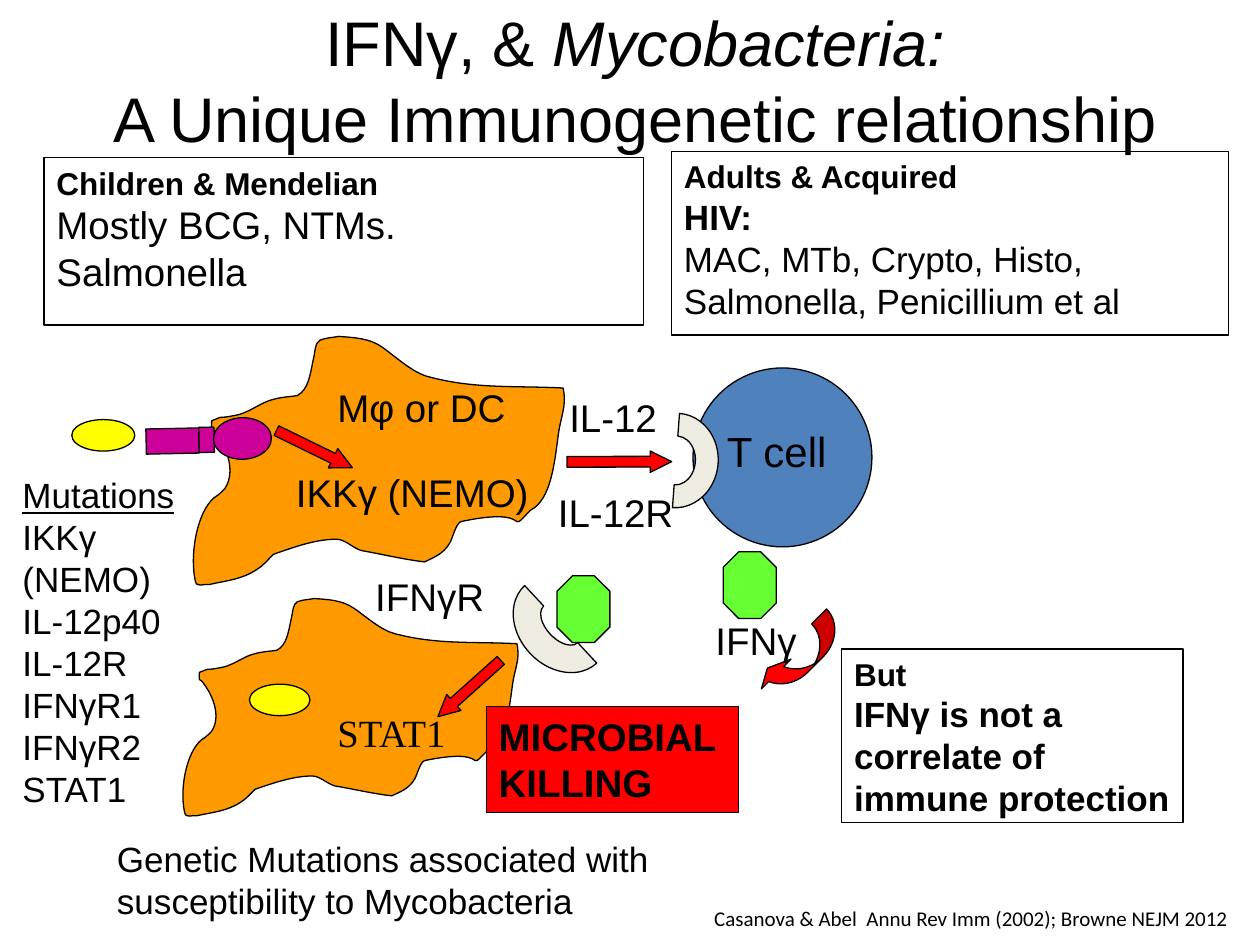
from lxml import etree
from pptx import Presentation
from pptx.dml.color import RGBColor
from pptx.enum.shapes import MSO_SHAPE
from pptx.enum.text import MSO_ANCHOR, PP_ALIGN
from pptx.oxml.ns import qn
from pptx.util import Inches, Pt

RECTANGLE, OVAL = MSO_SHAPE.RECTANGLE, MSO_SHAPE.OVAL
OCTAGON, UP_ARROW = MSO_SHAPE.OCTAGON, MSO_SHAPE.UP_ARROW
BLOCK_ARC, CURVED_ARROW = MSO_SHAPE.BLOCK_ARC, MSO_SHAPE.CURVED_RIGHT_ARROW
TOP, MIDDLE = MSO_ANCHOR.TOP, MSO_ANCHOR.MIDDLE
LEFT, CENTER = PP_ALIGN.LEFT, PP_ALIGN.CENTER

COLORS = {
    "black": "000000", "orange": "FF9900", "blue": "4F81BD", "cream": "EEECE1",
    "yellow": "FFFF00", "red": "FF0000", "green": "66FF33", "magenta": "CC0099",
}

presentation = Presentation()
presentation.slide_width = Inches(10)
presentation.slide_height = Inches(7.5)
slide = presentation.slides.add_slide(presentation.slide_layouts[6])


def style_shape(shape, fill=None, rotation=0):
    shape.shadow.inherit = False
    shape.rotation = rotation
    if fill:
        shape.fill.solid()
        shape.fill.fore_color.rgb = RGBColor.from_string(COLORS[fill])
    else:
        shape.fill.background()
    shape.line.color.rgb = RGBColor.from_string(COLORS["black"])
    shape.line.width = Pt(0.75)
    return shape


def write_text(shape, lines, font="Arial", anchor=TOP, alignment=LEFT):
    frame = shape.text_frame
    frame.word_wrap = True
    frame.vertical_anchor = anchor
    for index, (text, size, bold) in enumerate(lines):
        paragraph = frame.add_paragraph() if index else frame.paragraphs[0]
        paragraph.text = text
        paragraph.alignment = alignment
        paragraph.font.name = font
        paragraph.font.size = Pt(size)
        paragraph.font.bold = bold
        paragraph.font.color.rgb = RGBColor.from_string(COLORS["black"])
    return frame


cell_start = (1.68, 3.34)
cell_curves = [
    (1.83, 3.28, 1.67, 3.34, 1.9, 3.29), (2, 3.26, 2.08, 3.19, 2.17, 3.17),
    (2.24, 3.15, 2.3, 3.15, 2.36, 3.14), (2.45, 3.09, 2.46, 2.98, 2.49, 2.84),
    (2.5, 2.8, 2.5, 2.72, 2.54, 2.7), (2.59, 2.68, 2.64, 2.68, 2.69, 2.67),
    (2.8, 2.68, 2.93, 2.68, 3.04, 2.76), (3.15, 2.84, 3.28, 2.96, 3.4, 2.99),
    (3.77, 3.09, 4.08, 3.06, 4.47, 3.08), (4.5, 3.23, 4.45, 3.3, 4.43, 3.46),
    (4.4, 3.69, 4.37, 3.97, 4.21, 4.05), (4, 4.27, 4.27, 4.01, 3.66, 4.14),
    (3.62, 4.15, 3.59, 4.28, 3.57, 4.31), (3.52, 4.4, 3.43, 4.43, 3.37, 4.46),
    (3.2, 4.44, 3.04, 4.4, 2.87, 4.37), (2.8, 4.35, 2.74, 4.28, 2.67, 4.28),
    (2.51, 4.28, 2.34, 4.34, 2.17, 4.4), (2.13, 4.44, 2.09, 4.49, 2.04, 4.52),
    (1.92, 4.6, 1.79, 4.61, 1.66, 4.64), (1.62, 4.63, 1.56, 4.67, 1.55, 4.61),
    (1.5, 4.37, 1.58, 4.01, 1.73, 3.93), (1.75, 3.91, 1.77, 3.9, 1.79, 3.87),
    (1.87, 3.74, 1.8, 3.56, 1.73, 3.46), (1.67, 3.36, 1.68, 3.46, 1.68, 3.34),
]
controls = [cell_start]
for curve in cell_curves:
    controls.extend(zip(curve[::2], curve[1::2]))

for left, top, width, height in [(1.5, 2.67, 3, 2), (1.42, 4.75, 2.71, 1.75)]:
    points = [
        (Inches(left + (x - 1.5) * width / 3), Inches(top + (y - 2.67) * height / 2))
        for x, y in controls
    ]
    builder = slide.shapes.build_freeform(*points[0])
    builder.add_line_segments(points[1:], close=True)
    cell = style_shape(builder.convert_to_shape(), "orange")
    segments = list(cell._element.iter(qn("a:lnTo")))
    for index in range(0, len(cell_curves) * 3, 3):
        bezier = etree.Element(qn("a:cubicBezTo"))
        segments[index].addprevious(bezier)
        for segment in segments[index:index + 3]:
            bezier.append(segment[0])
            segment.getparent().remove(segment)

figures = [
    (OVAL, 5.5, 2.92, 1.42, 1.42, "blue", 0, {}),
    (BLOCK_ARC, 4.99, 3.32, 0.75, 0.67, "cream", 94.3, {2: 0.27}),
    (OVAL, 0.57, 3.33, 0.5, 0.25, "yellow", 0, {}),
    (BLOCK_ARC, 4.03, 4.62, 0.84, 0.67, "cream", 227.1, {2: 0.33}),
    (OVAL, 1.98, 5.43, 0.48, 0.25, "yellow", 0, {}),
    (OCTAGON, 4.42, 4.57, 0.42, 0.53, "green", 0, {}),
    (UP_ARROW, 2.41, 3.23, 0.17, 0.67, "red", 116, {1: 1}),
    (RECTANGLE, 1.27, 3.29, 0.2, 0.42, "magenta", 268.8, {}),
    (RECTANGLE, 1.54, 3.43, 0.2, 0.12, "magenta", 268.8, {}),
    (OVAL, 1.76, 3.25, 0.33, 0.46, "magenta", 268.8, {}),
    (OCTAGON, 5.74, 4.38, 0.42, 0.53, "green", 0, {}),
    (CURVED_ARROW, 6.23, 4.8, 0.25, 0.83, "red", 45, {0: 0.67, 1: 1.33, 2: 0.33}),
    (UP_ARROW, 3.64, 5.13, 0.17, 0.67, "red", 228.2, {1: 1}),
    (UP_ARROW, 4.83, 3.25, 0.17, 0.83, "red", 89.9, {1: 1}),
]
for kind, left, top, width, height, fill, rotation, adjustments in figures:
    shape = slide.shapes.add_shape(
        kind, Inches(left), Inches(top), Inches(width), Inches(height))
    style_shape(shape, fill, rotation)
    for index, value in adjustments.items():
        shape.adjustments[index] = value
    if kind == CURVED_ARROW:
        shape._element.spPr.xfrm.set("flipH", "1")

panels = [
    (5.33, 1.2, 4.42, 1.46, None, [
        ("Adults & Acquired", 18, True), ("HIV:", 20, True),
        ("MAC, MTb, Crypto, Histo, Salmonella, Penicillium et al", 20, False)]),
    (0.35, 1.25, 4.76, 1.33, None, [
        ("Children & Mendelian", 18, True), ("Mostly BCG, NTMs.", 22, False),
        ("Salmonella", 22, False)]),
    (3.86, 5.61, 2, 0.84, "red", [("MICROBIAL KILLING", 22, True)]),
    (6.68, 5.15, 2.71, 1.38, None, [
        ("But", 18, True),
        ("IFNγ is not a correlate of immune protection", 20, True)]),
]
for left, top, width, height, fill, lines in panels:
    panel = slide.shapes.add_shape(
        RECTANGLE, Inches(left), Inches(top), Inches(width), Inches(height))
    write_text(style_shape(panel, fill), lines)

labels = [
    ("T cell", 5.67, 3.33, 1.25, 0.5, 24, "Arial"),
    ("IL-12R", 4.33, 3.83, 1.25, 0.47, 22, "Arial"),
    ("IL-12", 4.42, 3.08, 1.25, 0.47, 22, "Arial"),
    ("IFNγ", 5.58, 4.85, 0.92, 0.47, 22, "Arial"),
    ("IFNγR", 2.88, 4.5, 1.17, 0.47, 22, "Arial"),
    ("STAT1", 2.58, 5.58, 1.42, 0.47, 22, "Times New Roman"),
    ("Mφ or DC", 2.58, 3, 1.83, 0.47, 22, "Arial"),
    ("IKKγ (NEMO)", 2.25, 3.67, 2.25, 0.47, 22, "Arial"),
    ("Genetic Mutations associated with susceptibility to Mycobacteria",
     0.83, 6.6, 4.92, 0.77, 20, "Arial"),
    ("Casanova & Abel  Annu Rev Imm (2002); Browne NEJM 2012",
     5.57, 7.14, 4.42, 0.35, 12, "Calibri"),
]
for text, left, top, width, height, size, font in labels:
    label = slide.shapes.add_textbox(
        Inches(left), Inches(top), Inches(width), Inches(height))
    write_text(label, [(text, size, False)], font)

mutations = ["Mutations", "IKKγ", "(ΝΕΜΟ)", "IL-12p40", "IL-12R", "IFNγR1", "IFNγR2", "STAT1"]
mutation_box = slide.shapes.add_textbox(Inches(0.08), Inches(3.71), Inches(2.5), Inches(2.79))
mutation_frame = write_text(mutation_box, [(name, 20, False) for name in mutations])
mutation_frame.paragraphs[0].font.underline = True

title = slide.shapes.add_textbox(Inches(0.08), Inches(0.09), Inches(9.92), Inches(1.08))
title_lines = [("IFNγ, & ", 36, False), ("A Unique Immunogenetic relationship", 36, False)]
title_frame = write_text(title, title_lines, anchor=MIDDLE, alignment=CENTER)
species = title_frame.paragraphs[0].add_run()
species.text = "Mycobacteria:"
species.font.italic = True

presentation.save("out.pptx")
